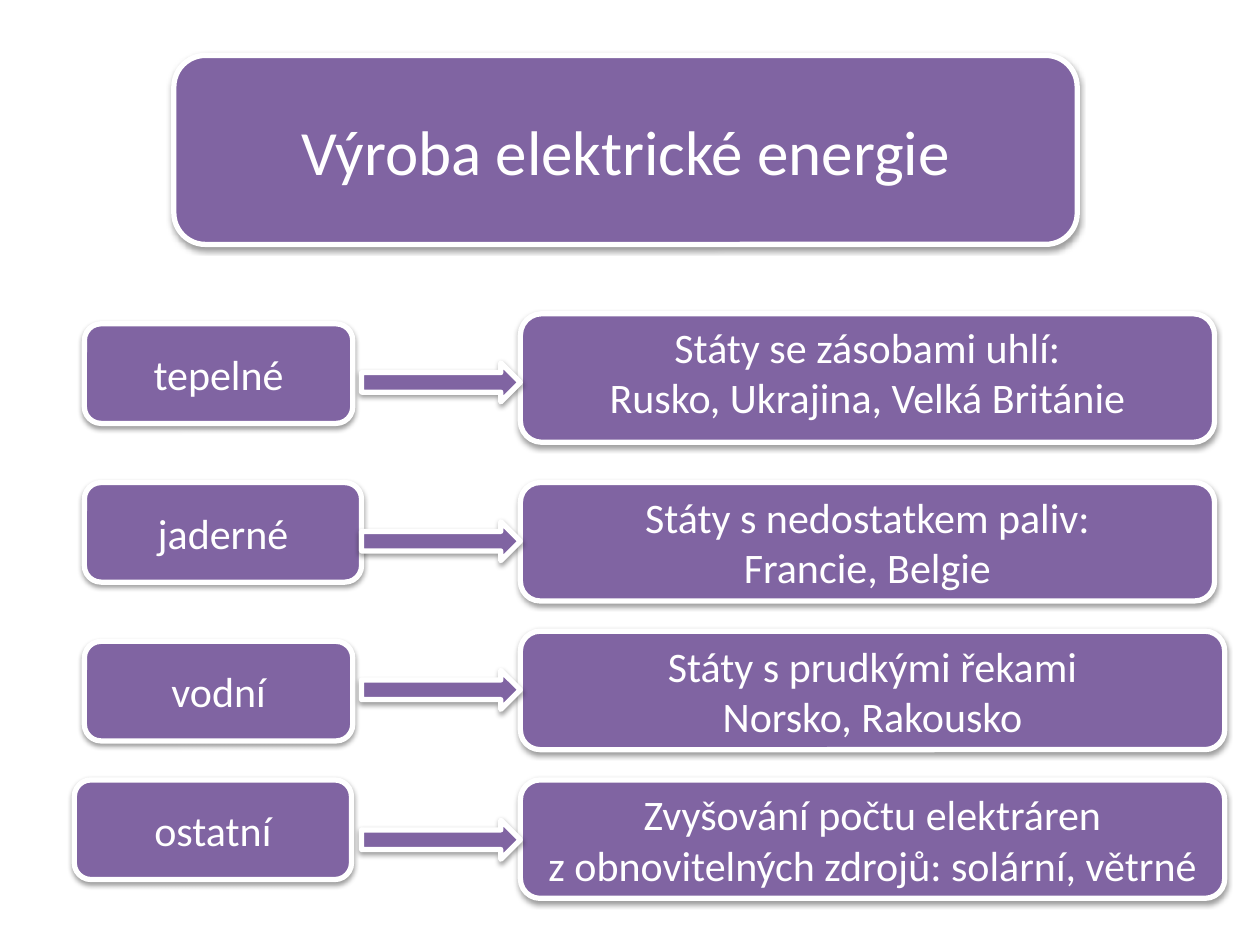
from lxml.etree import SubElement
from pptx import Presentation
from pptx.dml.color import RGBColor
from pptx.enum.shapes import MSO_SHAPE
from pptx.enum.text import MSO_ANCHOR, PP_ALIGN
from pptx.oxml import parse_xml
from pptx.oxml.ns import nsdecls, qn
from pptx.util import Inches, Pt

# source label, left, top, width; arrow top;
# countries, top, width, height, bottom inset
ROWS = [
    (("tepelné", 0.67, 2.57, 2.13), 2.88,
     (["Státy se zásobami uhlí:", "Rusko, Ukrajina, Velká Británie"],
      2.49, 5.51, 1.02, 0.15)),
    (("jaderné", 0.67, 3.83, 2.2), 4.14,
     (["Státy s nedostatkem paliv:", "Francie, Belgie"],
      3.83, 5.51, 0.94, 0.05)),
    (("vodní", 0.67, 5.09, 2.13), 5.32,
     (["Státy s prudkými řekami", "Norsko, Rakousko"],
      5.01, 5.59, 0.94, 0.05)),
    (("ostatní", 0.59, 6.19, 2.2), 6.51,
     (["Zvyšování počtu elektráren", "z obnovitelných zdrojů: solární, větrné"],
      6.19, 5.59, 0.94, 0.05)),
]


def color(hex_code):
    return RGBColor.from_string(hex_code)


def write(frame, lines, size=24, font="Calibri", ink="FFFFFF", bottom=0.05):
    frame.word_wrap = True
    frame.vertical_anchor = MSO_ANCHOR.MIDDLE
    frame.margin_bottom = Inches(bottom)
    for index, line in enumerate(lines):
        paragraph = frame.paragraphs[0] if index == 0 else frame.add_paragraph()
        paragraph.alignment = PP_ALIGN.CENTER
        run = paragraph.add_run()
        run.text = line
        run.font.name = font
        run.font.size = Pt(size)
        run.font.color.rgb = color(ink)


class Diagram:
    fill = "8064A2"
    outline = "FFFFFF"
    shadow = "000000"

    def __init__(self, slide):
        self.slide = slide

    def add(self, preset, left, top, width, height):
        shape = self.slide.shapes.add_shape(
            preset, Inches(left), Inches(top), Inches(width), Inches(height))
        shape.fill.solid()
        shape.fill.fore_color.rgb = color(self.fill)
        shape.line.color.rgb = color(self.outline)
        shape.line.width = Pt(3)
        # Soft shadow straight below
        effects = SubElement(shape._element.spPr, qn("a:effectLst"))
        effects.append(parse_xml(
            f'<a:outerShdw {nsdecls("a")} blurRad="{Pt(3.1)}" dist="{Pt(1.6)}" '
            f'dir="5400000" rotWithShape="0"><a:srgbClr val="{self.shadow}">'
            '<a:alpha val="38000"/></a:srgbClr></a:outerShdw>'))
        return shape

    def title(self, text, left, top, width, height):
        panel = self.add(MSO_SHAPE.ROUNDED_RECTANGLE, left, top, width, height)
        heading = self.slide.shapes.title
        heading.left, heading.top = panel.left, panel.top
        heading.width, heading.height = panel.width, panel.height
        write(heading.text_frame, [text], size=36)
        # The heading text lies over its rounded panel
        heading._element.addprevious(panel._element)

    def box(self, lines, left, top, width, height, **text_format):
        shape = self.add(MSO_SHAPE.ROUNDED_RECTANGLE, left, top, width, height)
        write(shape.text_frame, lines, **text_format)

    def arrow(self, top):
        self.add(MSO_SHAPE.RIGHT_ARROW, 2.87, top, 1.26, 0.31)


def main():
    prs = Presentation()
    prs.slide_width, prs.slide_height = Inches(10), Inches(7.5)
    diagram = Diagram(prs.slides.add_slide(prs.slide_layouts[5]))

    diagram.title("Výroba elektrické energie", 1.38, 0.44, 7.17, 1.5)

    # Kinds of power plants
    for (source, left, top, width), _, _ in ROWS:
        diagram.box([source], left, top, width, 0.79)

    # Where each kind is used
    for _, _, (countries, top, width, height, bottom) in ROWS:
        diagram.box(countries, 4.13, top, width, height, bottom=bottom)

    # Arrows on top of the boxes
    for _, arrow_top, _ in ROWS:
        diagram.arrow(arrow_top)

    prs.save("out.pptx")


if __name__ == "__main__":
    main()
